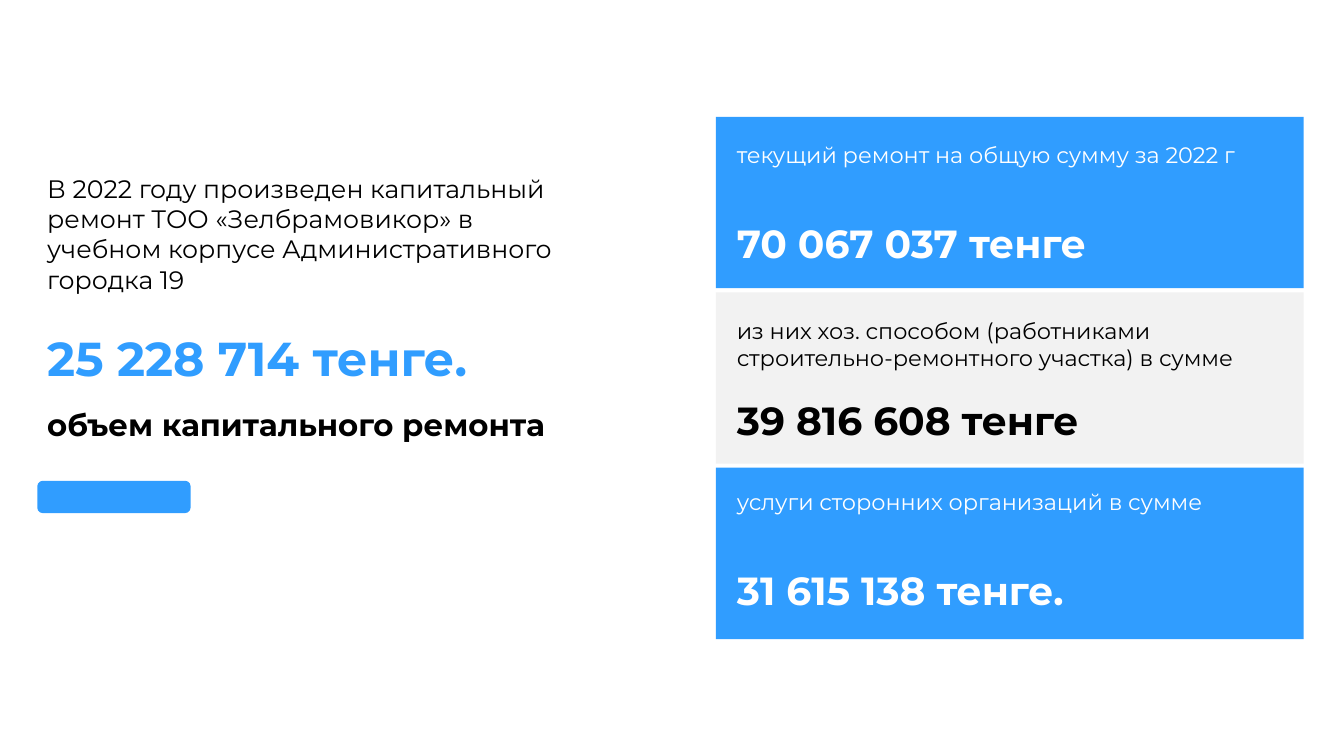
from dataclasses import dataclass

from pptx import Presentation
from pptx.dml.color import RGBColor
from pptx.enum.shapes import MSO_SHAPE
from pptx.enum.text import MSO_AUTO_SIZE, PP_ALIGN
from pptx.util import Inches, Pt


@dataclass(frozen=True)
class Theme:
    font: str = "Montserrat"
    blue: str = "309DFF"
    gray: str = "F2F2F2"
    black: str = "000000"
    white: str = "FFFFFF"
    label: int = 16
    body: int = 18
    caption: int = 22
    amount: int = 28
    headline: int = 34


theme = Theme()

presentation = Presentation()
presentation.slide_width = Inches(13.33)
presentation.slide_height = Inches(7.5)
slide = presentation.slides.add_slide(presentation.slide_layouts[6])


def add_panel(preset, left, top, width, height, color):
    panel = slide.shapes.add_shape(
        preset, Inches(left), Inches(top), Inches(width), Inches(height)
    )
    panel.shadow.inherit = False
    panel.fill.solid()
    panel.fill.fore_color.rgb = RGBColor.from_string(color)
    panel.line.fill.background()


def add_text(wording, left, top, width, height, size, color, bold=False):
    box = slide.shapes.add_textbox(
        Inches(left), Inches(top), Inches(width), Inches(height)
    )
    frame = box.text_frame
    frame.word_wrap = True
    frame.auto_size = MSO_AUTO_SIZE.SHAPE_TO_FIT_TEXT
    paragraph = frame.paragraphs[0]
    paragraph.alignment = PP_ALIGN.LEFT
    run = paragraph.add_run()
    run.text = wording
    run.font.name = theme.font
    run.font.size = Pt(size)
    run.font.bold = bold
    run.font.color.rgb = RGBColor.from_string(color)


summary_left = 0.37
add_text(
    "В 2022 году произведен капитальный ремонт ТОО «Зелбрамовикор» в "
    "учебном корпусе Административного городка 19",
    summary_left, 1.67, 5.54, 1.31, theme.body, theme.black,
)
add_text("25 228 714 тенге.", summary_left, 3.21, 4.51, 0.67,
         theme.headline, theme.blue, bold=True)
add_text("объем капитального ремонта", summary_left, 3.98, 5.66, 0.47,
         theme.caption, theme.black, bold=True)
add_panel(MSO_SHAPE.ROUNDED_RECTANGLE, summary_left, 4.77, 1.52, 0.32, theme.blue)

repairs = [
    ("текущий ремонт на общую сумму за 2022 г", "70 067 037 тенге",
     theme.blue, theme.white, 0.19, 0.37),
    ("из них хоз. способом (работниками строительно-ремонтного участка) в сумме",
     "39 816 608 тенге", theme.gray, theme.black, 0.2, 0.64),
    ("услуги сторонних организаций в сумме", "31 615 138 тенге.",
     theme.blue, theme.white, 0.15, 0.37),
]
card_left, card_top, card_width, card_height, card_gap = 7.1, 1.16, 5.83, 1.7, 0.04
text_left = card_left + 0.11
amount_offset = 0.78

for index, (label, amount, fill, ink, inset, label_height) in enumerate(repairs):
    top = card_top + index * (card_height + card_gap)
    label_top = top + inset
    add_panel(MSO_SHAPE.RECTANGLE, card_left, top, card_width, card_height, fill)
    add_text(label, text_left, label_top, 5.54, label_height, theme.label, ink)
    add_text(amount, text_left, label_top + amount_offset, 4.65, 0.57,
             theme.amount, ink, bold=True)

presentation.save("out.pptx")
